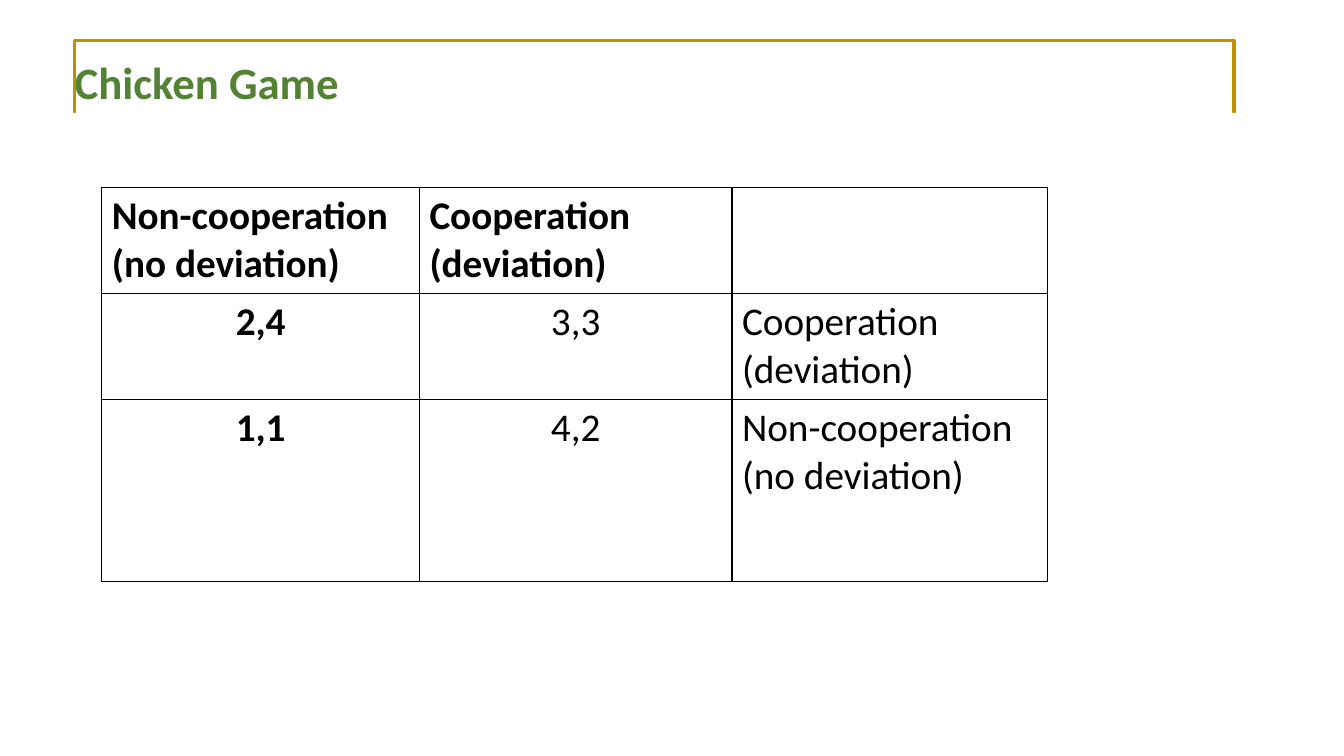
from dataclasses import dataclass

from lxml.etree import SubElement
from pptx import Presentation
from pptx.dml.color import RGBColor
from pptx.enum.shapes import MSO_SHAPE as Shape
from pptx.enum.text import MSO_ANCHOR as Anchor, PP_ALIGN as Align
from pptx.oxml.ns import qn
from pptx.util import Inches, Pt

BLACK, WHITE, GOLD, GREEN = "000000", "FFFFFF", "BF9000", "548235"
COLUMN_WIDTHS = (3.15, 3.1, 3.13)
ROW_HEIGHTS = (1.04, 1.05, 1.81)


@dataclass(frozen=True)
class Box:
    left: float
    top: float
    width: float
    height: float

    def lengths(self) -> tuple:
        return tuple(Inches(v) for v in (self.left, self.top, self.width, self.height))


@dataclass(frozen=True)
class Entry:
    text: str = ""
    bold: bool = False
    align: Align = Align.LEFT


COOPERATION = "Cooperation\n(deviation)"
NON_COOPERATION = "Non-cooperation\n(no deviation)"
PAYOFFS = (
    (Entry(NON_COOPERATION, True), Entry(COOPERATION, True), Entry()),
    (Entry("2,4", True, Align.CENTER), Entry("3,3", False, Align.CENTER), Entry(COOPERATION)),
    (Entry("1,1", True, Align.CENTER), Entry("4,2", False, Align.CENTER), Entry(NON_COOPERATION)),
)


def color(value: str) -> RGBColor:
    return RGBColor.from_string(value)


def format_font(font, size: float, value: str, bold: bool) -> None:
    for name, setting in {"name": "Calibri", "size": Pt(size), "bold": bold}.items():
        setattr(font, name, setting)
    font.color.rgb = color(value)


def add_rectangle(slide, box: Box, fill: str = "", line: str = "") -> None:
    shape = slide.shapes.add_shape(Shape.RECTANGLE, *box.lengths())
    shape.shadow.inherit = False
    if fill:
        shape.fill.solid()
        shape.fill.fore_color.rgb = color(fill)
    else:
        shape.fill.background()
    if line:
        shape.line.color.rgb = color(line)
        shape.line.width = Pt(2.25)
    else:
        shape.line.fill.background()


def write_title(slide, box: Box, text: str) -> None:
    title = slide.shapes.title
    title.left, title.top, title.width, title.height = box.lengths()
    title.text_frame.text = text
    title.text_frame.vertical_anchor = Anchor.MIDDLE
    paragraph = title.text_frame.paragraphs[0]
    paragraph.alignment = Align.LEFT
    paragraph.line_spacing = 0.9
    format_font(paragraph.font, 32, GREEN, True)


def add_borders(cell) -> None:
    properties = cell._tc.get_or_add_tcPr()
    for side in ("a:lnL", "a:lnR", "a:lnT", "a:lnB"):
        border = SubElement(properties, qn(side), w=str(Pt(1)))
        fill = SubElement(border, qn("a:solidFill"))
        SubElement(fill, qn("a:srgbClr"), val=BLACK)


def fill_cell(cell, entry: Entry) -> None:
    add_borders(cell)
    cell.fill.background()
    cell.text_frame.text = entry.text
    for paragraph in cell.text_frame.paragraphs:
        paragraph.alignment = entry.align
        format_font(paragraph.font, 28, BLACK, entry.bold)


def add_payoff_table(slide, box: Box) -> None:
    table = slide.shapes.add_table(len(ROW_HEIGHTS), len(COLUMN_WIDTHS), *box.lengths()).table
    table.first_row = table.horz_banding = False
    for column, width in zip(table.columns, COLUMN_WIDTHS):
        column.width = Inches(width)
    for row, height, entries in zip(table.rows, ROW_HEIGHTS, PAYOFFS):
        row.height = Inches(height)
        for cell, entry in zip(row.cells, entries):
            fill_cell(cell, entry)


def main() -> None:
    presentation = Presentation()
    presentation.slide_width, presentation.slide_height = Inches(13.33), Inches(7.5)
    slide = presentation.slides.add_slide(presentation.slide_layouts[5])
    write_title(slide, Box(0.64, 0.33, 11.5, 1.03), "Chicken Game")
    add_rectangle(slide, Box(0.74, 0.4, 11.5, 1.26), line=GOLD)
    add_rectangle(slide, Box(0.64, 1.12, 11.77, 0.61), fill=WHITE)
    add_payoff_table(slide, Box(1.01, 1.86, sum(COLUMN_WIDTHS), sum(ROW_HEIGHTS)))
    presentation.save("out.pptx")


if __name__ == "__main__":
    main()
